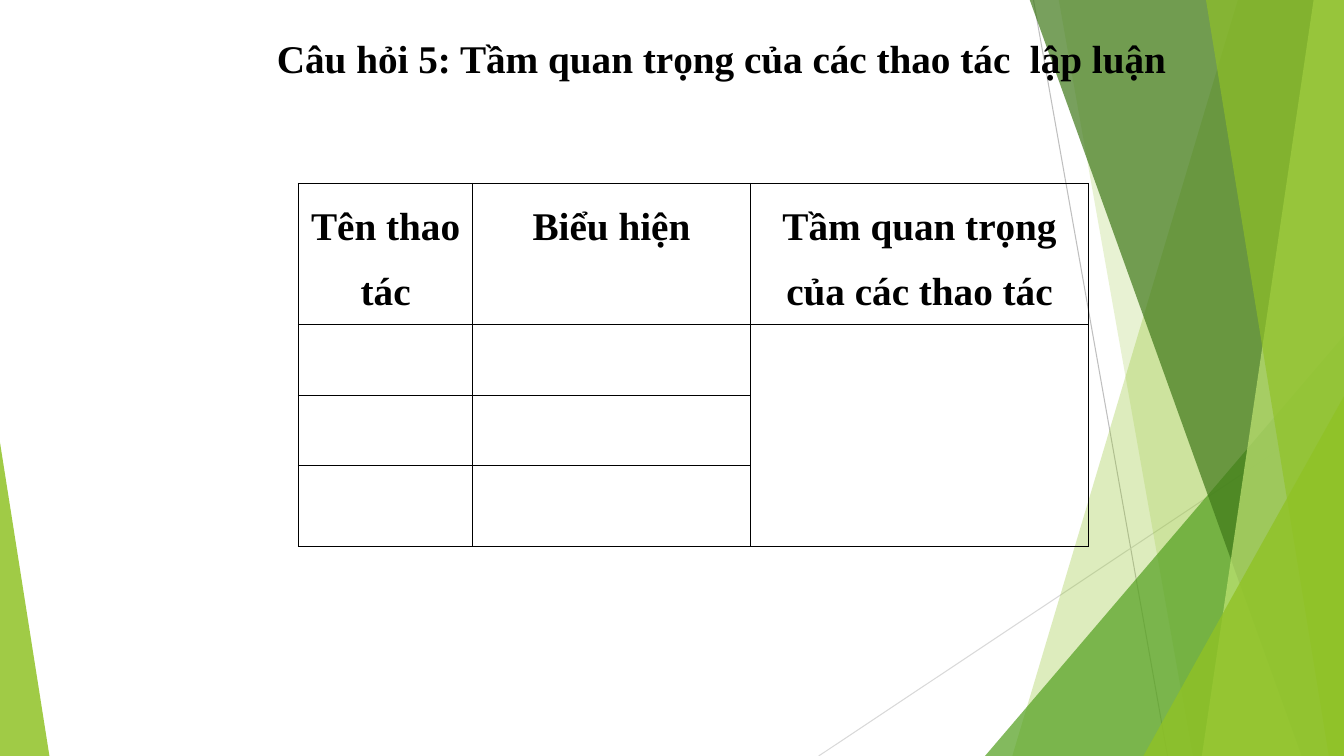
"""Build the slide on the importance of argumentation techniques."""
from dataclasses import dataclass

from lxml.etree import SubElement
from pptx import Presentation
from pptx.dml.color import RGBColor
from pptx.enum.shapes import MSO_CONNECTOR as Connector, MSO_SHAPE as Preset
from pptx.enum.text import MSO_AUTO_SIZE as AutoSize, PP_ALIGN as Align
from pptx.oxml.ns import qn
from pptx.util import Inches, Pt

WIDTH, HEIGHT, TOP = 13.33, 7.5, -0.01
BLACK = RGBColor(0x00, 0x00, 0x00)
LIME = RGBColor(0x90, 0xC2, 0x26)
PALE_LIME = RGBColor(0xC0, 0xE4, 0x74)
GREEN = RGBColor(0x54, 0xA0, 0x21)
DARK_GREEN = RGBColor(0x3F, 0x78, 0x19)
GRAY = RGBColor(0xBF, 0xBF, 0xBF)
LIGHT_GRAY = RGBColor(0xD9, 0xD9, 0xD9)

TITLE = "Câu hỏi 5: Tầm quan trọng của các thao tác  lập luận"
HEADERS = ("Tên thao tác", "Biểu hiện", "Tầm quan trọng của các thao tác")
COLUMN_WIDTHS = (1.73, 2.75, 3.36)
ROW_HEIGHTS = (1.4, 0.7, 0.7, 0.8)


@dataclass
class Ray:
    start: tuple[float, float]
    end: tuple[float, float]
    color: RGBColor


@dataclass
class Band:
    """Area from a slanted left edge to the right side of the slide."""
    top_x: float
    bottom_x: float
    color: RGBColor
    opacity: int


@dataclass
class Corner:
    """Triangle standing on the bottom of the slide."""
    left: float
    top: float
    width: float
    apex: float
    color: RGBColor
    opacity: int


RAYS = (
    Ray((10.25, 0), (11.58, HEIGHT), GRAY),
    Ray((WIDTH, 4.03), (8.12, HEIGHT), LIGHT_GRAY),
)
FACETS = (
    Band(12.28, 10.04, LIME, 30),
    Band(10.5, 11.83, LIME, 20),
    Corner(9.77, 3.33, 3.56, 1, GREEN, 72),
    Band(10.21, 12.91, DARK_GREEN, 70),
    Band(13.03, 11.92, PALE_LIME, 70),
    Band(11.96, 13.18, LIME, 65),
    Corner(11.34, 3.93, 1.99, 1, LIME, 80),
    Corner(0, 4.39, 0.49, 0, LIME, 85),
)


def draw_ray(slide, ray: Ray) -> None:
    ends = [Inches(value) for value in (*ray.start, *ray.end)]
    connector = slide.shapes.add_connector(Connector.STRAIGHT, *ends)
    connector.line.color.rgb = ray.color
    connector.line.width = Pt(0.75)
    SubElement(connector._element.spPr, qn("a:effectLst"))


def draw_facet(slide, facet: Band | Corner) -> None:
    if isinstance(facet, Band):
        builder = slide.shapes.build_freeform(Inches(facet.top_x), Inches(TOP))
        outline = ((WIDTH, TOP), (WIDTH, HEIGHT), (facet.bottom_x, HEIGHT))
        builder.add_line_segments([(Inches(x), Inches(y)) for x, y in outline])
        shape = builder.convert_to_shape()
    else:
        box = (facet.left, facet.top, facet.width, HEIGHT - facet.top)
        shape = slide.shapes.add_shape(
            Preset.ISOSCELES_TRIANGLE, *[Inches(value) for value in box])
        shape.adjustments[0] = facet.apex
    shape.shadow.inherit = False
    shape.line.fill.background()
    shape.fill.solid()
    shape.fill.fore_color.rgb = facet.color
    color = shape._element.spPr.find(qn("a:solidFill"))[0]
    SubElement(color, qn("a:alpha"), val=str(facet.opacity * 1000))


def write_heading(text_frame, text: str, spacing: float = 1.0) -> None:
    text_frame.text = text
    paragraph = text_frame.paragraphs[0]
    paragraph.alignment = Align.CENTER
    paragraph.line_spacing = spacing
    font = paragraph.runs[0].font
    font.name, font.size, font.bold = "Times New Roman", Pt(28), True
    font.color.rgb = BLACK


def draw_title(slide) -> None:
    box = slide.shapes.add_textbox(
        Inches(2.56), Inches(0.29), Inches(9.19), Inches(0.57))
    box.text_frame.word_wrap = True
    box.text_frame.auto_size = AutoSize.SHAPE_TO_FIT_TEXT
    write_heading(box.text_frame, TITLE)


def style_cell(cell) -> None:
    cell.margin_left = cell.margin_right = Inches(0.07)
    cell.margin_top = cell.margin_bottom = 0
    properties = cell._tc.get_or_add_tcPr()
    for side in ("L", "R", "T", "B"):
        line = SubElement(properties, qn(f"a:ln{side}"), w=str(Pt(1)))
        fill = SubElement(line, qn("a:solidFill"))
        SubElement(fill, qn("a:srgbClr"), val=str(BLACK))
    cell.fill.background()


def draw_table(slide) -> None:
    table = slide.shapes.add_table(
        len(ROW_HEIGHTS), len(COLUMN_WIDTHS), Inches(2.96), Inches(1.82),
        Inches(sum(COLUMN_WIDTHS)), Inches(sum(ROW_HEIGHTS))).table
    table.first_row = table.horz_banding = False
    for column, width in zip(table.columns, COLUMN_WIDTHS):
        column.width = Inches(width)
    for row, height in zip(table.rows, ROW_HEIGHTS):
        row.height = Inches(height)
    for cell in table.iter_cells():
        style_cell(cell)
    for index, header in enumerate(HEADERS):
        write_heading(table.cell(0, index).text_frame, header, 1.5)
    table.cell(1, 2).merge(table.cell(3, 2))


def main() -> None:
    presentation = Presentation()
    presentation.slide_width = Inches(WIDTH)
    presentation.slide_height = Inches(HEIGHT)
    slide = presentation.slides.add_slide(presentation.slide_layouts[6])
    for ray in RAYS:
        draw_ray(slide, ray)
    for facet in FACETS:
        draw_facet(slide, facet)
    draw_title(slide)
    draw_table(slide)
    presentation.save("out.pptx")


if __name__ == "__main__":
    main()
